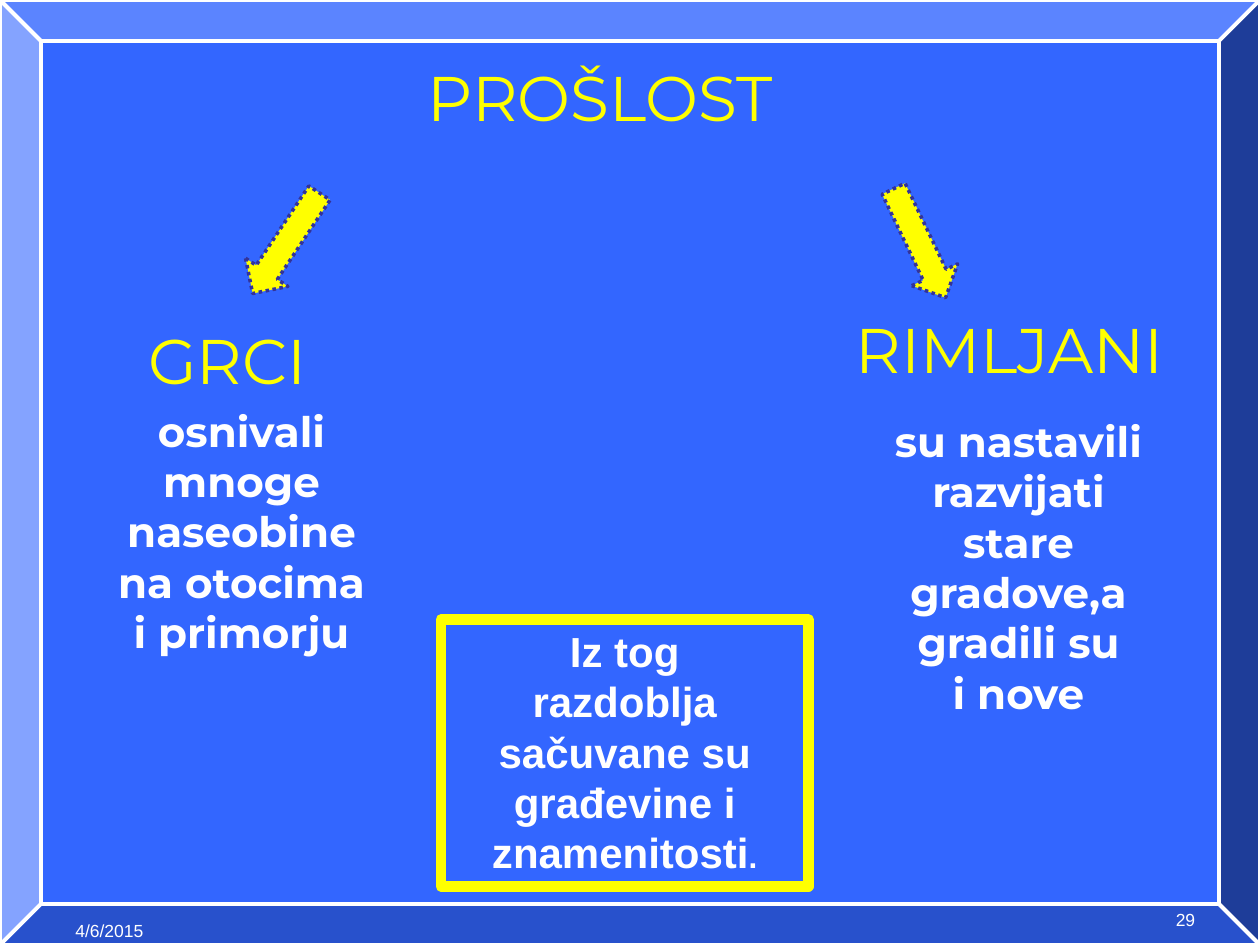
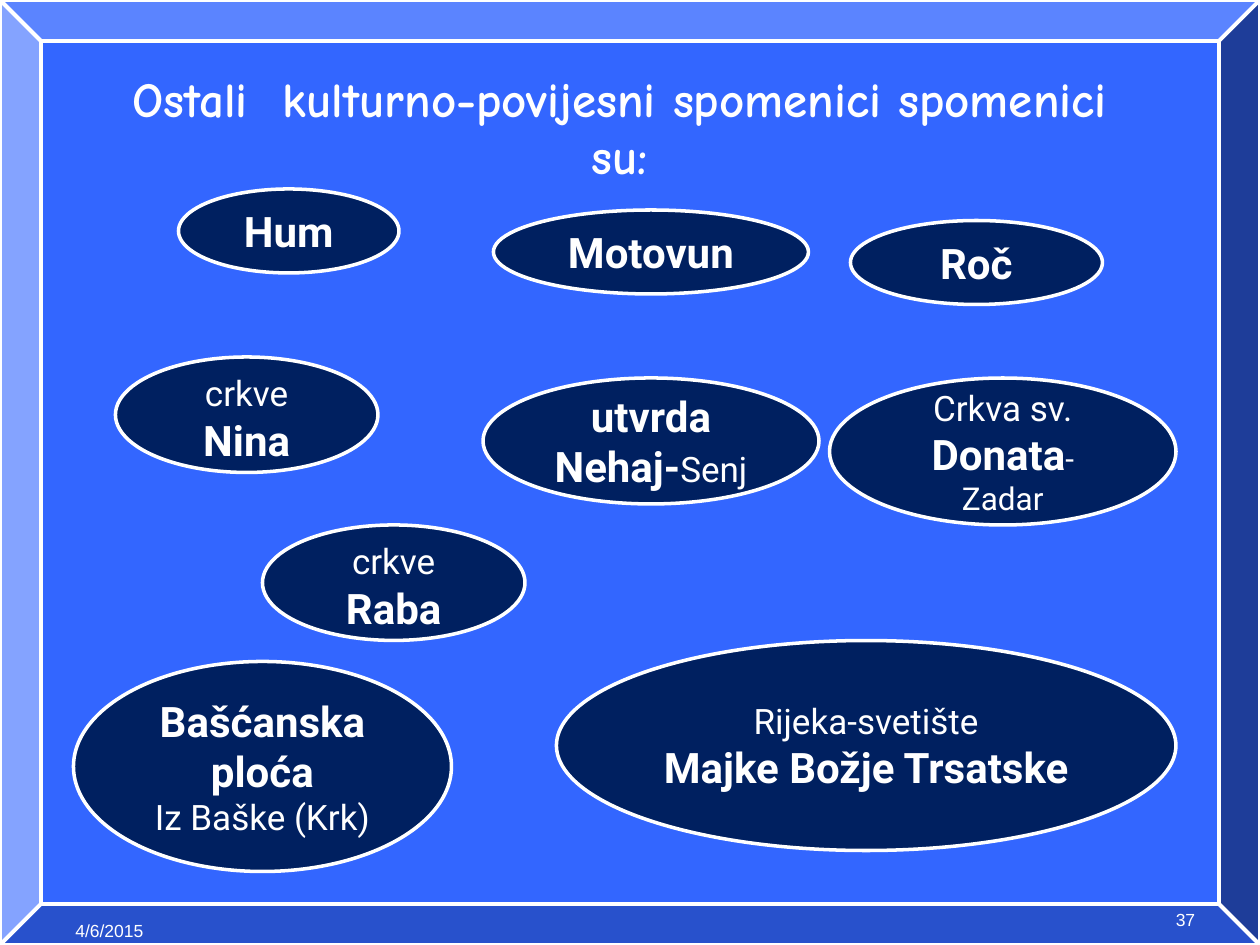
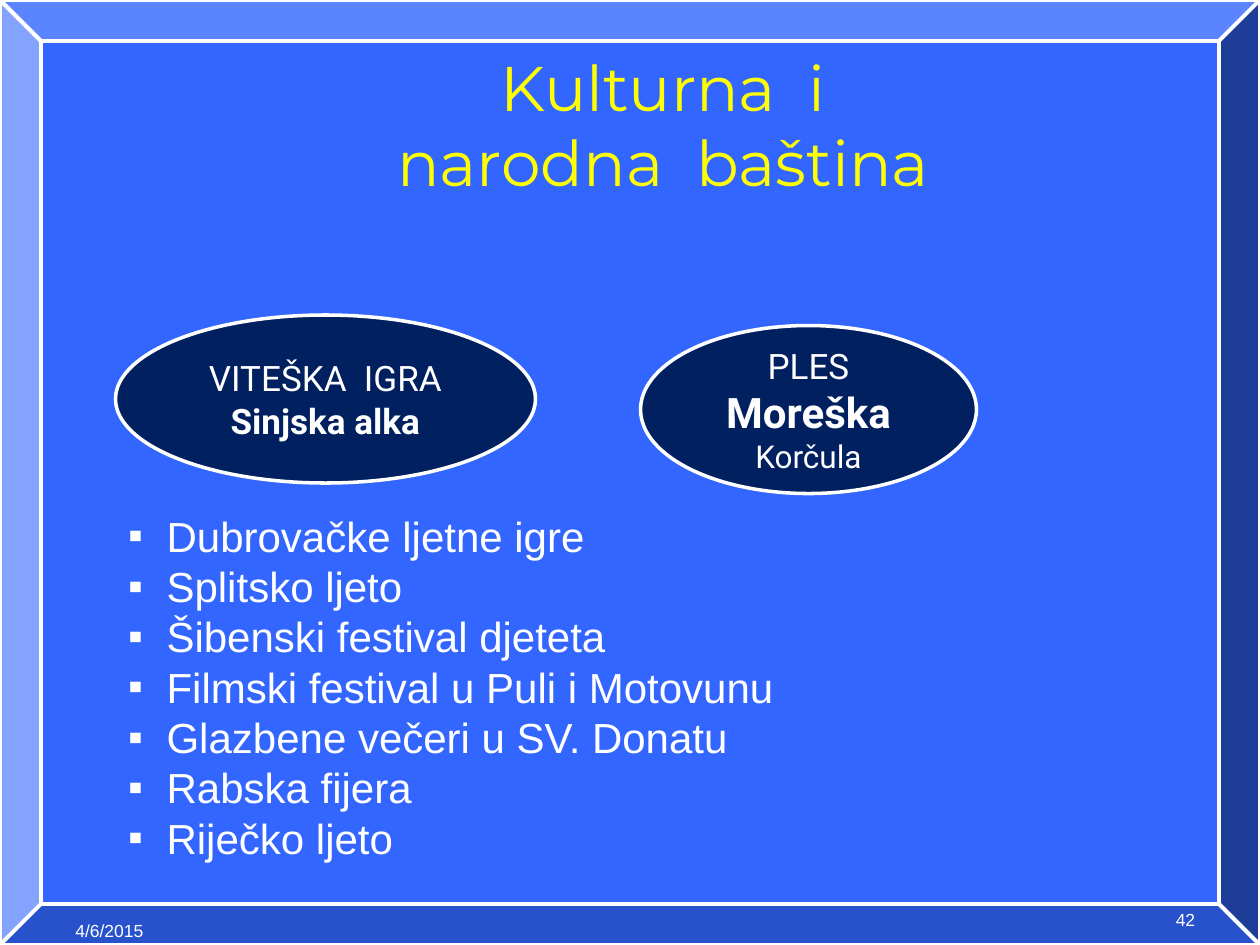
import pptx
import pptx.dml.color
import pptx.enum.dml
import pptx.enum.shapes
import pptx.enum.text
import pptx.oxml
import pptx.oxml.ns
import pptx.util

Pt = pptx.util.Pt
ALIGN = pptx.enum.text.PP_ALIGN
SHAPE = pptx.enum.shapes.MSO_SHAPE

BLUE, NAVY, INDIGO = "3366FF", "002060", "333399"
YELLOW, WHITE = "FFFF00", "FFFFFF"
TITLE_ONLY, TITLE_AND_BODY = 5, 1
BODY_SPACING = Pt(28.75)


def color(hex_value):
    return pptx.dml.color.RGBColor.from_string(hex_value)


# Text: a paragraph is a list of (text, size, bold) runs
def plain(lines, size, bold=False):
    return [[(line, size, bold)] for line in lines]


def write(frame, paragraphs, font_name, font_color=WHITE, align=ALIGN.CENTER,
          spacing=None):
    frame.word_wrap = True
    for index, runs in enumerate(paragraphs):
        paragraph = frame.add_paragraph() if index else frame.paragraphs[0]
        paragraph.alignment = align
        paragraph.space_before = Pt(0)
        if spacing:
            paragraph.line_spacing = spacing
        _, size, bold = runs[0]
        font = paragraph.font
        font.name, font.size, font.bold = font_name, Pt(size), bold
        font.color.rgb = color(font_color)
        for text, run_size, run_bold in runs:
            run = paragraph.add_run()
            run.text = text
            if (run_size, run_bold) != (size, bold):
                run.font.size, run.font.bold = Pt(run_size), run_bold


def add_text(slide, box, paragraphs, font_name, **style):
    shape = slide.shapes.add_textbox(*map(Pt, box))
    write(shape.text_frame, paragraphs, font_name, **style)
    return shape


def fill_placeholder(shape, box, paragraphs, font_name, **style):
    shape.left, shape.top, shape.width, shape.height = map(Pt, box)
    shape.text_frame.auto_size = pptx.enum.text.MSO_AUTO_SIZE.NONE
    shape.text_frame.vertical_anchor = pptx.enum.text.MSO_ANCHOR.TOP
    write(shape.text_frame, paragraphs, font_name, **style)


# Shapes
def add_shape(slide, kind, box, fill, line, line_width):
    shape = slide.shapes.add_shape(kind, *map(Pt, box))
    shape.shadow.inherit = False
    shape.fill.solid()
    shape.fill.fore_color.rgb = color(fill)
    shape.line.color.rgb = color(line)
    shape.line.width = Pt(line_width)
    return shape


def add_ellipse(slide, box, paragraphs):
    ellipse = add_shape(slide, SHAPE.OVAL, box, NAVY, WHITE, 2)
    write(ellipse.text_frame, paragraphs, "Roboto")


def add_arrow(slide, left, rotation):
    arrow = add_shape(slide, SHAPE.DOWN_ARROW, (left, 104.5, 29, 69),
                      YELLOW, INDIGO, 2)
    arrow.line.dash_style = pptx.enum.dml.MSO_LINE.ROUND_DOT
    arrow.rotation = rotation


def add_bullets(frame, indent):
    for paragraph in frame.paragraphs:
        properties = paragraph.alignment and paragraph._p.get_or_add_pPr()
        properties.set("marL", str(Pt(indent)))
        properties.set("indent", str(-Pt(indent)))
        bullet = pptx.oxml.parse_xml(
            f'<a:buChar {pptx.oxml.ns.nsdecls("a")} char="▪"/>')
        properties.insert_element_before(bullet, "a:tabLst", "a:defRPr")


# Shared frame and footers
def add_master_frame(presentation, slide):
    bevel = add_shape(slide, SHAPE.BEVEL, (0, 0, 720, 540), BLUE, WHITE, 2.25)
    bevel.adjustments[0] = 0.043
    presentation.slide_master.shapes.element.insert(2, bevel.element)


def add_slide(presentation, layout, number):
    slide = presentation.slides.add_slide(presentation.slide_layouts[layout])
    add_text(slide, (36, 522, 168, 18), plain(["4/6/2015"], 10), "Arial",
             align=ALIGN.LEFT)
    add_text(slide, (522, 516, 168, 24), plain([number], 10), "Arial",
             align=ALIGN.RIGHT)
    return slide


def past_slide(presentation):
    slide = add_slide(presentation, TITLE_ONLY, "29")
    add_master_frame(presentation, slide)
    fill_placeholder(slide.shapes.title, (127, 30, 432, 132),
                     plain(["PROŠLOST"], 36), "Montserrat", font_color=YELLOW)
    add_arrow(slide, 149, 33.6)
    add_arrow(slide, 511, 334.5)

    peoples = [
        ("GRCI", (73, 180, 114, 90), (42, 228, 192, 181),
         ["osnivali", "mnoge", "naseobine", "na otocima", "i primorju"]),
        ("RIMLJANI", (469, 174, 216, 114), (486, 234, 192, 211),
         ["su nastavili", "razvijati", "stare", "gradove,a", "gradili su",
          "i nove"]),
    ]
    for name, name_box, deeds_box, deeds in peoples:
        add_text(slide, name_box, plain([name], 36), "Montserrat",
                 font_color=YELLOW)
        add_text(slide, deeds_box, plain(deeds, 24, True), "Montserrat",
                 spacing=BODY_SPACING)

    conclusion = plain(["Iz tog", "razdoblja"], 24, True)
    conclusion.append([("sačuvane su građevine i znamenitosti", 24, True),
                       (".", 18, True)])
    box = add_text(slide, (252, 354, 210, 152.5), conclusion, "Arial",
                   spacing=BODY_SPACING)
    box.line.color.rgb = color(YELLOW)
    box.line.width = Pt(6)


def monuments_slide(presentation):
    slide = add_slide(presentation, TITLE_ONLY, "37")
    title = "Ostali  kulturno-povijesni spomenici spomenici su:"
    fill_placeholder(slide.shapes.title, (66, 36, 576, 75),
                     plain([title], 28, True), "Comic Neue", spacing=Pt(33))
    monuments = [
        ((102, 108, 126, 48), plain(["Hum"], 24, True)),
        ((282, 120, 180, 48), plain(["Motovun"], 24, True)),
        ((486, 126, 144, 48), plain(["Roč"], 24, True)),
        ((276, 216, 192, 72), [[("utvrda", 24, True)],
                               [("Nehaj-", 24, True), ("Senj", 20, False)]]),
        ((66, 204, 150, 66), [[("crkve", 20, False), (" Nina", 24, True)]]),
        ((474, 216, 198, 84), [[("Crkva sv. ", 20, False),
                                ("Donata", 24, True),
                                ("-Zadar", 18, False)]]),
        ((150, 300, 150, 66), [[("crkve", 20, False), (" Raba", 24, True)]]),
        ((318, 366, 354, 120), [[("Rijeka-svetište", 20, False)],
                                [("Majke Božje Trsatske", 24, True)]]),
        ((42, 378, 216, 120), [[("Bašćanska ploća", 24, True)],
                               [("Iz Baške (Krk)", 20, False)]]),
    ]
    for box, paragraphs in monuments:
        add_ellipse(slide, box, paragraphs)


def heritage_slide(presentation):
    slide = add_slide(presentation, TITLE_AND_BODY, "42")
    fill_placeholder(slide.shapes.title, (193, 24, 372, 168),
                     plain(["Kulturna  i", "narodna  baština"], 36),
                     "Montserrat", font_color=YELLOW)
    add_ellipse(slide, (66, 180, 240, 96), [[("VITEŠKA  IGRA", 20, False)],
                                            [("Sinjska alka", 20, True)]])
    add_ellipse(slide, (366, 186, 192, 96), [[("PLES", 20, False)],
                                             [("Moreška", 24, True)],
                                             [("Korčula", 18, False)]])
    events = ["Dubrovačke ljetne igre", "Splitsko ljeto",
              "Šibenski festival djeteta",
              "Filmski festival u Puli i Motovunu",
              "Glazbene večeri u SV. Donatu", "Rabska fijera",
              "Riječko ljeto"]
    body = slide.placeholders[1]
    fill_placeholder(body, (66, 288, 408, 211), plain(events, 24), "Arial",
                     align=ALIGN.LEFT, spacing=BODY_SPACING)
    add_bullets(body.text_frame, 22)


def main():
    presentation = pptx.Presentation()
    presentation.slide_width, presentation.slide_height = Pt(720), Pt(540)
    past_slide(presentation)
    monuments_slide(presentation)
    heritage_slide(presentation)
    presentation.save("out.pptx")


if __name__ == "__main__":
    main()
